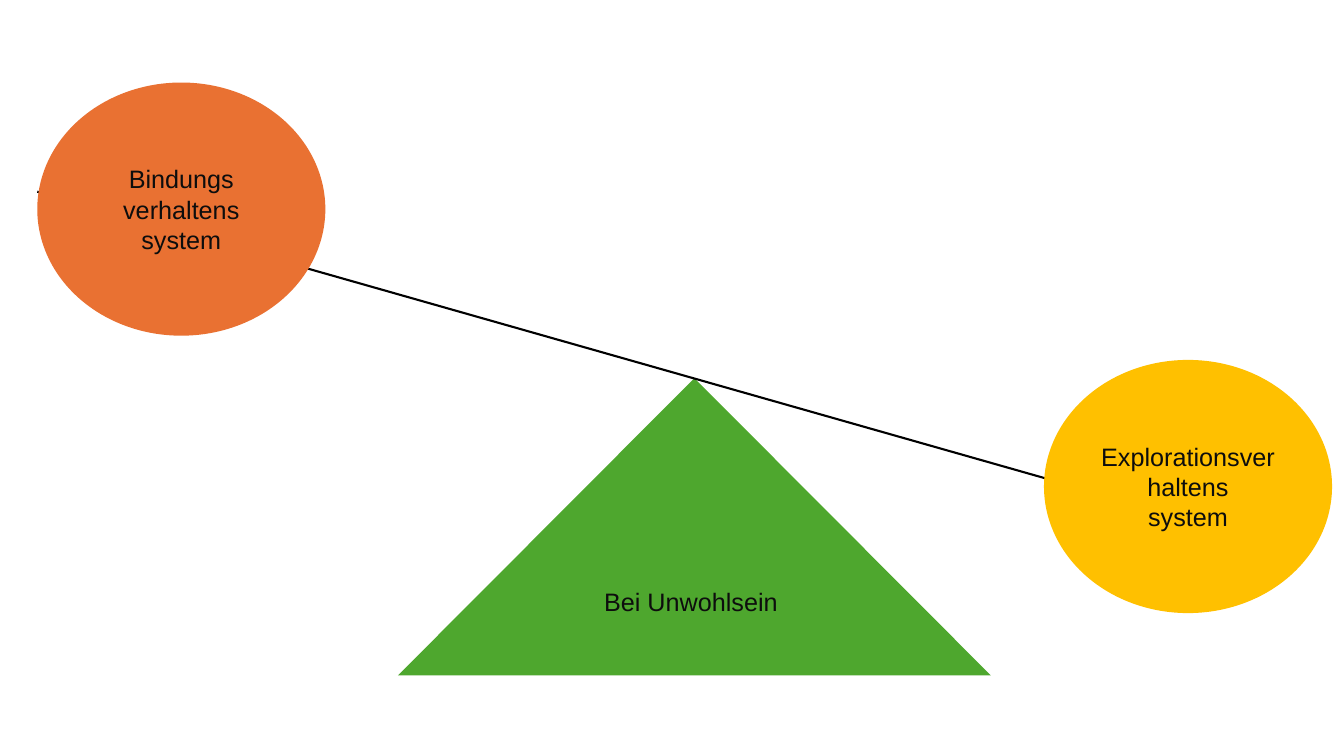
from dataclasses import dataclass

from lxml import etree
from pptx import Presentation
from pptx.dml.color import RGBColor
from pptx.enum.shapes import MSO_CONNECTOR, MSO_SHAPE
from pptx.enum.text import MSO_ANCHOR, PP_ALIGN
from pptx.oxml.ns import qn
from pptx.slide import Slide
from pptx.util import Cm, Pt

BASE = MSO_SHAPE.ISOSCELES_TRIANGLE
DISC = MSO_SHAPE.FLOWCHART_CONNECTOR
LINE = MSO_CONNECTOR.STRAIGHT
MIDDLE = MSO_ANCHOR.MIDDLE
CENTER = PP_ALIGN.CENTER

GREEN = RGBColor(0x4E, 0xA7, 0x2E)
YELLOW = RGBColor(0xFF, 0xC0, 0x00)
ORANGE = RGBColor(0xE9, 0x71, 0x32)
INK = RGBColor(0x0D, 0x0D, 0x0D)
BLACK = RGBColor(0x00, 0x00, 0x00)

FONT = {"name": "Arial", "size": Pt(18)}
FRAME = {"word_wrap": True, "vertical_anchor": MIDDLE}
WIDTH, HEIGHT = 7.26, 6.38


@dataclass(frozen=True)
class Part:
    kind: MSO_SHAPE
    left: float
    top: float
    width: float
    height: float
    fill: RGBColor
    lines: tuple[str, ...]


@dataclass(frozen=True)
class Beam:
    left: float
    top: float
    right: float
    bottom: float


STAND = Part(BASE, 10.03, 9.53, 14.94, 7.49, GREEN, ("Bei Unwohlsein ",))
BEAM = Beam(0.94, 4.83, 30.66, 13.28)
LOADS = (
    Part(DISC, 26.31, 9.07, WIDTH, HEIGHT, YELLOW,
         ("Explorationsverhaltens", "system")),
    Part(DISC, 0.94, 2.08, WIDTH, HEIGHT, ORANGE,
         ("Bindungs", "verhaltens", "system")),
)


def style(item: object, values: dict[str, object]) -> None:
    for key, value in values.items():
        setattr(item, key, value)


def draw_part(slide: Slide, part: Part) -> None:
    shape = slide.shapes.add_shape(
        part.kind, Cm(part.left), Cm(part.top), Cm(part.width), Cm(part.height))
    shape.shadow.inherit = False
    shape.fill.solid()
    shape.fill.fore_color.rgb = part.fill
    shape.line.fill.background()
    frame = shape.text_frame
    style(frame, FRAME)
    frame.text = "\n".join(part.lines)
    for para in frame.paragraphs:
        para.alignment = CENTER
        for run in para.runs:
            style(run.font, FONT)
            run.font.color.rgb = INK


def draw_beam(slide: Slide, beam: Beam) -> None:
    line = slide.shapes.add_connector(
        LINE, Cm(beam.left), Cm(beam.top), Cm(beam.right), Cm(beam.bottom))
    line.line.color.rgb = BLACK
    line.line.width = Pt(1.5)
    etree.SubElement(line._element.spPr, qn("a:effectLst"))


def main() -> None:
    deck = Presentation()
    style(deck, {"slide_width": Cm(33.87), "slide_height": Cm(19.05)})
    slide = deck.slides.add_slide(deck.slide_layouts[6])
    draw_part(slide, STAND)
    draw_beam(slide, BEAM)
    for load in LOADS:
        draw_part(slide, load)
    deck.save("out.pptx")


if __name__ == "__main__":
    main()
